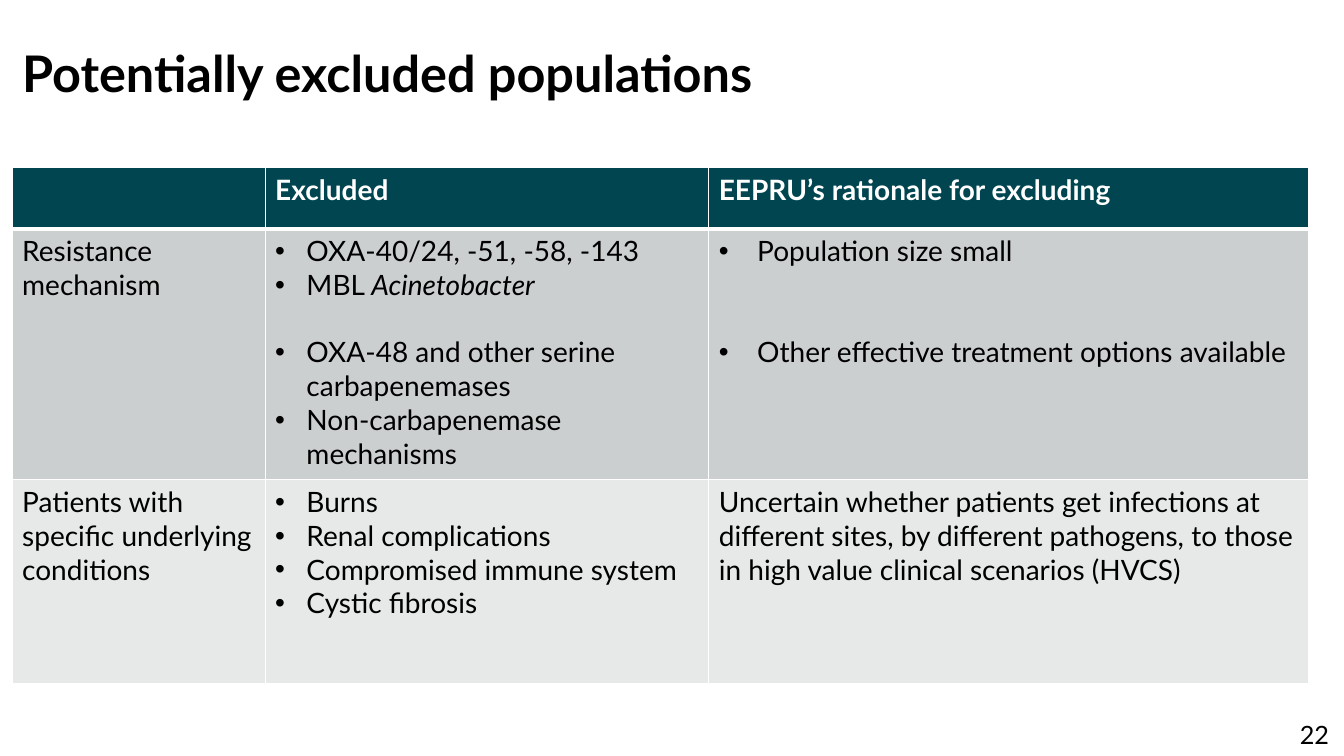
"""Build the slide on potentially excluded populations."""
from dataclasses import dataclass

import pptx
import pptx.dml.color
import pptx.enum.text
import pptx.oxml
import pptx.oxml.ns
import pptx.util

Inches = pptx.util.Inches
Pt = pptx.util.Pt
FONT = "Lato"
BODY_SIZE = 20
LINE_PITCH = 24
COLORS = {
    "text": "000000",
    "header_text": "FFFFFF",
    "border": "FFFFFF",
    "header": "004550",
    "band_dark": "CCCFD0",
    "band_light": "E7E9E9",
}


@dataclass(frozen=True)
class Para:
    text: str
    italic_tail: str = ""
    indent: float = 0
    lines_before: int = 0


@dataclass(frozen=True)
class Row:
    height: float
    fill: str
    cells: tuple[tuple[Para, ...], ...]
    header: bool = False
    top: int = 1
    bottom: int = 1


def bullets(indent: float, *texts: str) -> tuple[Para, ...]:
    return tuple(Para(text, indent=indent) for text in texts)


COLUMN_WIDTHS = (2.51, 4.4, 5.95)
ROWS = (
    Row(0.61, "header", (
        (Para(""),),
        (Para("Excluded"),),
        (Para("EEPRU’s rationale for excluding"),),
    ), header=True, bottom=3),
    Row(2.49, "band_dark", (
        (Para("Resistance mechanism"),),
        (
            Para("OXA-40/24, -51, -58, -143", indent=0.31),
            Para("MBL ", "Acinetobacter", indent=0.31),
            Para("OXA-48 and other serine carbapenemases", indent=0.31, lines_before=1),
            Para("Non-carbapenemase mechanisms", indent=0.31),
        ),
        (
            Para("Population size small", indent=0.38),
            Para("Other effective treatment options available", indent=0.38, lines_before=2),
        ),
    ), top=3),
    Row(2.02, "band_light", (
        (Para("Patients with specific underlying conditions"),),
        bullets(0.31, "Burns", "Renal complications", "Compromised immune system", "Cystic fibrosis"),
        (Para("Uncertain whether patients get infections at different sites, by different "
              "pathogens, to those in high value clinical scenarios (HVCS)"),),
    )),
)


def add_run(p, text: str, *, size: float = BODY_SIZE, color: str = "text",
            bold: bool = False, italic: bool = False) -> None:
    r = p.add_run()
    r.text = text
    r.font.name = FONT
    r.font.size = Pt(size)
    r.font.bold = bold
    r.font.italic = italic
    r.font.color.rgb = pptx.dml.color.RGBColor.from_string(COLORS[color])


def add_text(slide, box: tuple[float, float, float, float], text: str, *,
             align=pptx.enum.text.PP_ALIGN.LEFT, spacing: float = 1.0, **style) -> None:
    tf = slide.shapes.add_textbox(*map(Inches, box)).text_frame
    tf.word_wrap = True
    p = tf.paragraphs[0]
    p.alignment = align
    p.line_spacing = spacing
    add_run(p, text, **style)


def set_bullet(p, indent: float) -> None:
    pPr = p._p.get_or_add_pPr()
    pPr.set("marL", str(Inches(indent)))
    pPr.set("indent", str(-Inches(indent)))
    ns = pptx.oxml.ns.nsdecls("a")
    pPr.append(pptx.oxml.parse_xml(f'<a:buFont {ns} typeface="Arial"/>'))
    pPr.append(pptx.oxml.parse_xml(f'<a:buChar {ns} char="•"/>'))


def set_borders(cell, top: int, bottom: int) -> None:
    tcPr = cell._tc.get_or_add_tcPr()
    ns = pptx.oxml.ns.nsdecls("a")
    for side, width in (("L", 1), ("R", 1), ("T", top), ("B", bottom)):
        tcPr.append(pptx.oxml.parse_xml(
            f'<a:ln{side} {ns} w="{Pt(width)}"><a:solidFill>'
            f'<a:srgbClr val="{COLORS["border"]}"/></a:solidFill></a:ln{side}>'))


def fill_cell(cell, row: Row, paras: tuple[Para, ...]) -> None:
    set_borders(cell, row.top, row.bottom)
    cell.fill.solid()
    cell.fill.fore_color.rgb = pptx.dml.color.RGBColor.from_string(COLORS[row.fill])
    color = "header_text" if row.header else "text"
    tf = cell.text_frame
    for i, para in enumerate(paras):
        p = tf.add_paragraph() if i else tf.paragraphs[0]
        if para.lines_before:
            p.space_before = Pt(LINE_PITCH * para.lines_before)
        if para.indent:
            set_bullet(p, para.indent)
        if para.text:
            add_run(p, para.text, color=color, bold=row.header)
        if para.italic_tail:
            add_run(p, para.italic_tail, color=color, italic=True)


def add_population_table(slide) -> None:
    width, height = sum(COLUMN_WIDTHS), sum(row.height for row in ROWS)
    table = slide.shapes.add_table(
        len(ROWS), len(COLUMN_WIDTHS),
        Inches(0.12), Inches(1.66), Inches(width), Inches(height)).table
    for column, column_width in zip(table.columns, COLUMN_WIDTHS):
        column.width = Inches(column_width)
    for table_row, row in zip(table.rows, ROWS):
        table_row.height = Inches(row.height)
        for cell, paras in zip(table_row.cells, row.cells):
            fill_cell(cell, row, paras)


def main() -> None:
    prs = pptx.Presentation()
    prs.slide_width, prs.slide_height = Inches(13.33), Inches(7.5)
    slide = prs.slides.add_slide(prs.slide_layouts[6])
    add_text(slide, (11.44, 7.09, 1.84, 0.4), "22", size=18,
             align=pptx.enum.text.PP_ALIGN.RIGHT)
    add_text(slide, (0.12, 0.44, 12.22, 1.4), "Potentially excluded populations",
             size=36, bold=True, spacing=0.9)
    add_population_table(slide)
    prs.save("out.pptx")


if __name__ == "__main__":
    main()
